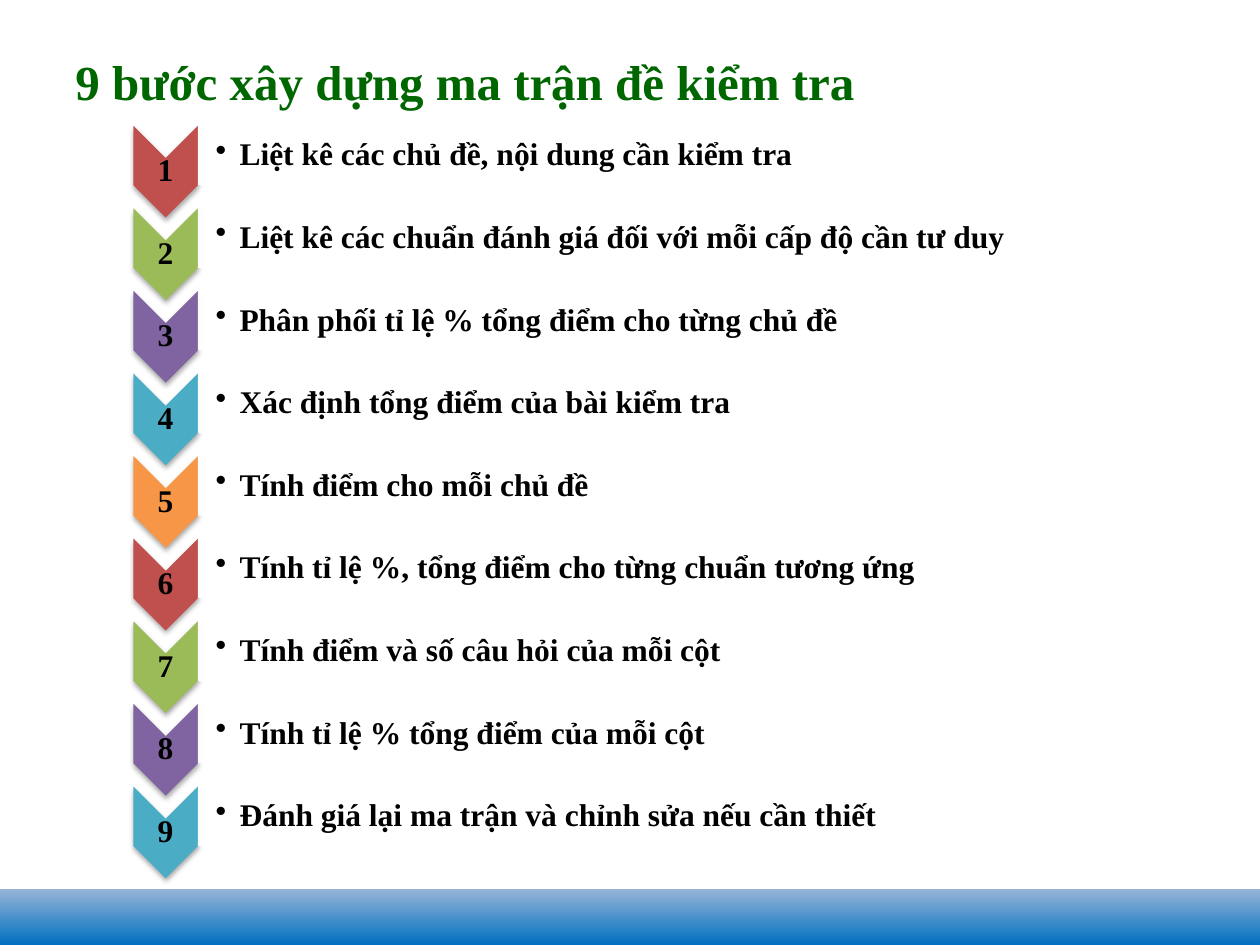
from lxml.etree import SubElement
from pptx import Presentation
from pptx.dml.color import RGBColor
from pptx.enum.shapes import MSO_SHAPE as Preset
from pptx.enum.text import MSO_ANCHOR as Anchor, PP_ALIGN as Align
from pptx.oxml.ns import qn
from pptx.util import Cm, Pt

# Content
TITLE = "9 bước xây dựng ma trận đề kiểm tra"
STEPS = [
    "Liệt kê các chủ đề, nội dung cần kiểm tra",
    "Liệt kê các chuẩn đánh giá đối với mỗi cấp độ cần tư duy",
    "Phân phối tỉ lệ % tổng điểm cho từng chủ đề",
    "Xác định tổng điểm của bài kiểm tra",
    "Tính điểm cho mỗi chủ đề",
    "Tính tỉ lệ %, tổng điểm cho từng chuẩn tương ứng",
    "Tính điểm và số câu hỏi của mỗi cột",
    "Tính tỉ lệ % tổng điểm của mỗi cột",
    "Đánh giá lại ma trận và chỉnh sửa nếu cần thiết",
]

# Style
FONT = "Times New Roman"
GREEN = RGBColor(0x00, 0x66, 0x00)
BLACK = RGBColor(0x00, 0x00, 0x00)
WHITE = RGBColor(0xFF, 0xFF, 0xFF)
BAR_BOTTOM = RGBColor(0x00, 0x70, 0xC0)
BAR_TOP = RGBColor(0x95, 0xB3, 0xD7)
CHEVRON_COLORS = [
    RGBColor(0xC0, 0x50, 0x4D),
    RGBColor(0x9B, 0xBB, 0x59),
    RGBColor(0x80, 0x64, 0xA2),
    RGBColor(0x4B, 0xAC, 0xC6),
    RGBColor(0xF7, 0x96, 0x46),
]

# Layout in cm: centre line of the first and last chevron
FIRST_CENTER, LAST_CENTER = 3.46, 16.78
PITCH = (LAST_CENTER - FIRST_CENTER) / (len(STEPS) - 1)
CHEVRON_LEFT, CHEVRON_WIDTH, CHEVRON_HEIGHT = 2.69, 1.3, 1.85
PANEL_LEFT, PANEL_WIDTH, PANEL_HEIGHT = 3.99, 18.52, 1.19
PANEL_RISE = 0.32


def add_turned_shape(slide, preset, left, center, width, height, color):
    """Add a shape turned by 90 degrees that covers width x height as seen."""
    shape = slide.shapes.add_shape(
        preset, Cm(left + (width - height) / 2), Cm(center - width / 2), Cm(height), Cm(width))
    shape.rotation = 90
    shape.fill.solid()
    shape.fill.fore_color.rgb = color
    shape.line.fill.background()
    shape.shadow.inherit = False
    return shape


def add_text(slide, text, left, top, width, height, size, color, insets=None):
    box = slide.shapes.add_textbox(Cm(left), Cm(top), Cm(width), Cm(height))
    frame = box.text_frame
    frame.word_wrap = True
    frame.vertical_anchor = Anchor.MIDDLE
    if insets:
        frame.margin_left, frame.margin_right = Cm(insets[0]), Cm(insets[1])
        frame.margin_top = frame.margin_bottom = Cm(insets[1])
    paragraph = frame.paragraphs[0]
    run = paragraph.add_run()
    run.text = text
    run.font.name = FONT
    run.font.size = Pt(size)
    run.font.bold = True
    run.font.color.rgb = color
    return paragraph


def add_shadow(shape):
    effects = shape._element.spPr.find(qn("a:effectLst"))
    shadow = SubElement(effects, qn("a:outerShdw"), blurRad=str(Pt(3.1)),
                        dist=str(Pt(1.8)), dir="5400000", rotWithShape="0")
    color = SubElement(shadow, qn("a:srgbClr"), val=str(BLACK))
    SubElement(color, qn("a:alpha"), val="35000")


def add_bullet(paragraph):
    properties = paragraph._p.get_or_add_pPr()
    properties.set("marL", str(Cm(0.48)))
    properties.set("indent", str(-Cm(0.48)))
    SubElement(properties, qn("a:buChar"), char="•")


presentation = Presentation()
presentation.slide_width, presentation.slide_height = Cm(25.4), Cm(19.05)
slide = presentation.slides.add_slide(presentation.slide_layouts[6])

# Footer bar
bar = slide.shapes.add_shape(Preset.RECTANGLE, 0, Cm(17.93), Cm(25.4), Cm(1.12))
bar.shadow.inherit = False
bar.line.fill.background()
bar.fill.gradient()
bar.fill.gradient_angle = 90
for stop, color in zip(bar.fill.gradient_stops, (BAR_BOTTOM, BAR_TOP)):
    stop.color.rgb = color

# Title
add_text(slide, TITLE, 1.27, 0.76, 23.42, 1.75, 28, GREEN)

# Steps
for index, step in enumerate(STEPS):
    center = FIRST_CENTER + index * PITCH
    chevron = add_turned_shape(slide, Preset.CHEVRON, CHEVRON_LEFT, center, CHEVRON_WIDTH,
                               CHEVRON_HEIGHT, CHEVRON_COLORS[index % len(CHEVRON_COLORS)])
    add_shadow(chevron)
    number = add_text(slide, str(index + 1), CHEVRON_LEFT, center - 0.28, CHEVRON_WIDTH, 0.56,
                      18, BLACK, (0.03, 0.03))
    number.alignment = Align.CENTER
    number.line_spacing = 0.9

    panel_center = center - PANEL_RISE
    panel = add_turned_shape(slide, Preset.ROUND_2_SAME_RECTANGLE, PANEL_LEFT, panel_center,
                             PANEL_WIDTH, PANEL_HEIGHT, WHITE)
    fill_color = panel._element.spPr.find(qn("a:solidFill"))[0]
    SubElement(fill_color, qn("a:alpha"), val="90000")
    description = add_text(slide, step, PANEL_LEFT, panel_center - 0.55, 18.44, 1.1,
                           18, BLACK, (0.36, 0.03))
    description.line_spacing = 0.9
    add_bullet(description)

presentation.save("out.pptx")
